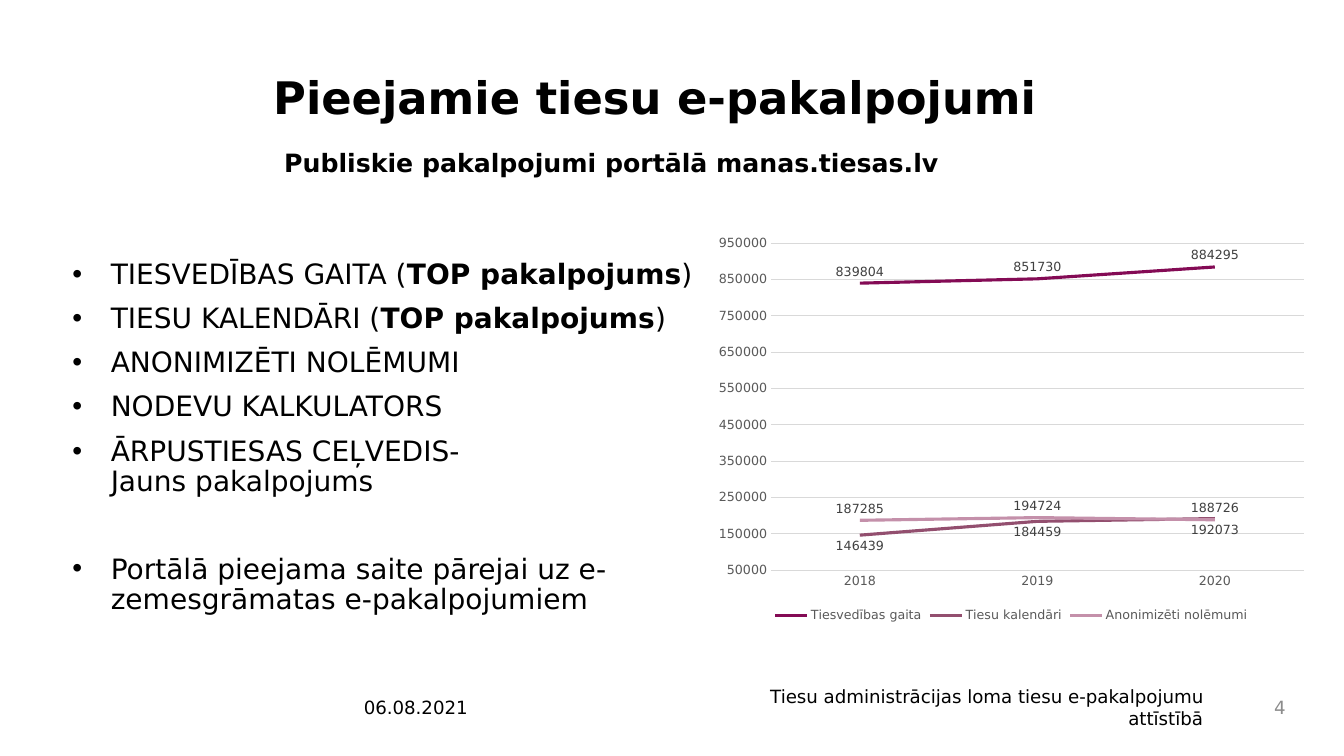
from lxml import etree
from pptx import Presentation
from pptx.chart.data import CategoryChartData
from pptx.dml.color import RGBColor
from pptx.enum.chart import XL_CHART_TYPE, XL_LABEL_POSITION, XL_LEGEND_POSITION, XL_TICK_MARK
from pptx.enum.text import MSO_ANCHOR, MSO_AUTO_SIZE, PP_ALIGN
from pptx.oxml.ns import qn
from pptx.util import Inches, Pt

FONT = "DejaVu Sans"
BLACK = RGBColor(0x00, 0x00, 0x00)
NUMBER_GRAY = RGBColor(0x8C, 0x8C, 0x8C)
AXIS_GRAY = RGBColor(0x59, 0x59, 0x59)
LABEL_GRAY = RGBColor(0x40, 0x40, 0x40)
GRID_GRAY = RGBColor(0xD9, 0xD9, 0xD9)
PLUM = RGBColor(0x84, 0x0B, 0x55)
MAUVE = RGBColor(0x93, 0x4F, 0x6F)
PINK = RGBColor(0xC4, 0x90, 0xAA)

LEFT, RIGHT, JUSTIFY = PP_ALIGN.LEFT, PP_ALIGN.RIGHT, PP_ALIGN.JUSTIFY
TOP, MIDDLE = MSO_ANCHOR.TOP, MSO_ANCHOR.MIDDLE
ABOVE, BELOW = XL_LABEL_POSITION.ABOVE, XL_LABEL_POSITION.BELOW
NO_TICKS = XL_TICK_MARK.NONE

TITLE_ONLY = 5
GRID_UNIT = Inches(0.1)
FOOTER_ROW, FOOTER_ROWS = 68.2, 4
INDENT = Inches(0.38)

SERVICES = [
    (["TIESVEDĪBAS GAITA (", "TOP pakalpojums", ")"], 10),
    (["TIESU KALENDĀRI (", "TOP pakalpojums", ")"], 10),
    (["ANONIMIZĒTI NOLĒMUMI"], 10),
    (["NODEVU KALKULATORS"], 10),
    (["ĀRPUSTIESAS CEĻVEDIS-\vJauns pakalpojums"], 10),
    (["Portālā pieejama saite pārejai uz e-zemesgrāmatas e-pakalpojumiem"], 41),
]
YEARS = ["2018", "2019", "2020"]
USAGE = [
    ("Tiesvedības gaita", (839804, 851730, 884295), PLUM, ABOVE),
    ("Tiesu kalendāri", (146439, 184459, 192073), MAUVE, BELOW),
    ("Anonimizēti nolēmumi", (187285, 194724, 188726), PINK, ABOVE),
]


def on_grid(column, row, columns, rows):
    return [round(count * GRID_UNIT) for count in (column, row, columns, rows)]


def style_font(font, size, color, bold=False):
    font.name = FONT
    font.size = Pt(size)
    font.bold = bold
    font.color.rgb = color


def add_title(slide, box, text):
    title = slide.shapes.title
    title.left, title.top, title.width, title.height = box
    frame = title.text_frame
    frame.text = text
    frame.vertical_anchor = TOP
    frame.auto_size = MSO_AUTO_SIZE.NONE
    paragraph = frame.paragraphs[0]
    paragraph.alignment = LEFT
    paragraph.line_spacing = 0.9
    style_font(paragraph.font, 32, BLACK, True)


def add_label(slide, box, text, size, color=BLACK, alignment=LEFT, anchor=MIDDLE, bold=False):
    frame = slide.shapes.add_textbox(*box).text_frame
    frame.word_wrap = True
    frame.vertical_anchor = anchor
    paragraph = frame.paragraphs[0]
    paragraph.text = text
    paragraph.alignment = alignment
    style_font(paragraph.font, size, color, bold)


def add_services(slide, box):
    frame = slide.shapes.add_textbox(*box).text_frame
    frame.word_wrap = True
    for index, (parts, space) in enumerate(SERVICES):
        paragraph = frame.add_paragraph() if index else frame.paragraphs[0]
        properties = paragraph._p.get_or_add_pPr()
        properties.set("marL", str(INDENT))
        properties.set("indent", str(-INDENT))
        etree.SubElement(properties, qn("a:buFont"), typeface="Arial")
        etree.SubElement(properties, qn("a:buChar"), char="•")
        paragraph.line_spacing = 0.9
        paragraph.space_before = Pt(space if index else 0)
        if len(parts) == 1:
            paragraph.text = parts[0]
        else:
            for position, part in enumerate(parts):
                run = paragraph.add_run()
                run.text = part
                run.font.bold = position == 1
        style_font(paragraph.font, 20, BLACK)


def add_usage_chart(slide, box):
    data = CategoryChartData(number_format="General")
    data.categories = YEARS
    for name, values, _, _ in USAGE:
        data.add_series(name, values)
    chart = slide.shapes.add_chart(XL_CHART_TYPE.LINE, *box, data).chart
    style_font(chart.font, 10, BLACK)
    chart.has_title = False
    chart.has_legend = True
    chart.legend.position = XL_LEGEND_POSITION.BOTTOM
    chart.legend.include_in_layout = False
    style_font(chart.legend.font, 9, AXIS_GRAY)

    for axis in (chart.category_axis, chart.value_axis):
        axis.major_tick_mark = axis.minor_tick_mark = NO_TICKS
        style_font(axis.tick_labels.font, 9, AXIS_GRAY)
    value_axis = chart.value_axis
    value_axis.minimum_scale = 50000
    value_axis.maximum_scale = 950000
    value_axis.major_unit = 100000
    value_axis.has_major_gridlines = True
    value_axis.format.line.fill.background()
    for line in (value_axis.major_gridlines.format.line, chart.category_axis.format.line):
        line.color.rgb = GRID_GRAY
        line.width = Pt(0.75)

    plot = chart.plots[0]
    plot.vary_by_categories = False
    for series, (_, _, color, position) in zip(plot.series, USAGE):
        series.smooth = False
        series.format.line.color.rgb = color
        series.format.line.width = Pt(2.25)
        labels = series.data_labels
        labels.show_value = True
        labels.position = position
        style_font(labels.font, 9, LABEL_GRAY)


def add_footer(slide):
    parts = [
        (35.1, 30, "06.08.2021", BLACK, LEFT),
        (75.3, 45, "Tiesu administrācijas loma tiesu e-pakalpojumu attīstībā", BLACK, RIGHT),
        (121.2, 7.3, "4", NUMBER_GRAY, RIGHT),
    ]
    for column, columns, text, color, alignment in parts:
        box = on_grid(column, FOOTER_ROW, columns, FOOTER_ROWS)
        add_label(slide, box, text, 13, color, alignment)


def main():
    presentation = Presentation()
    presentation.slide_width = Inches(13.33)
    presentation.slide_height = Inches(7.5)
    slide = presentation.slides.add_slide(presentation.slide_layouts[TITLE_ONLY])
    add_title(slide, on_grid(26.1, 7, 98.3, 11.2), "Pieejamie tiesu e-pakalpojumi")
    add_services(slide, on_grid(6.2, 25.3, 69.1, 29.8))
    add_footer(slide)
    add_label(slide, on_grid(27.2, 14.1, 101.3, 4),
              "Publiskie pakalpojumi portālā manas.tiesas.lv", 18,
              alignment=JUSTIFY, anchor=TOP, bold=True)
    add_usage_chart(slide, on_grid(70.1, 22.6, 60.4, 39.6))
    presentation.save("out.pptx")


if __name__ == "__main__":
    main()
